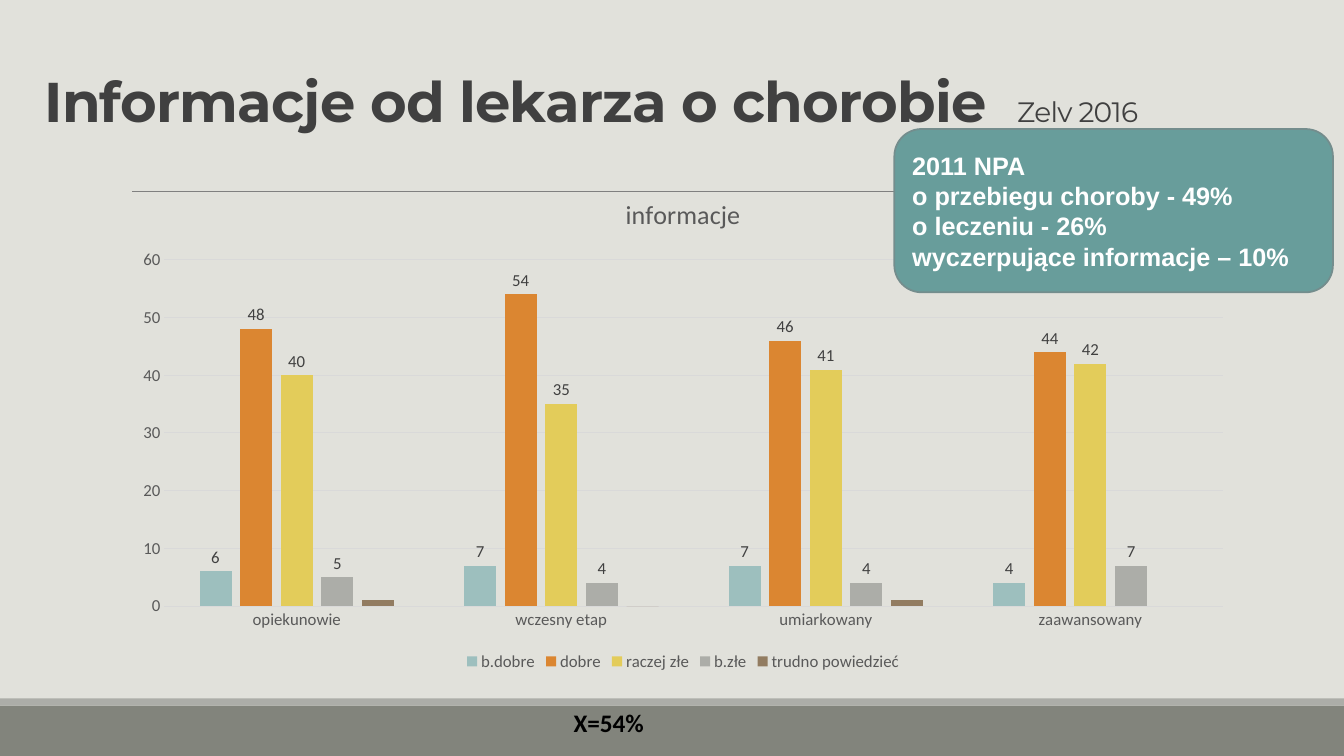
from dataclasses import dataclass
from typing import Optional

import pptx
import pptx.chart.data
import pptx.dml.color
import pptx.enum.chart
import pptx.enum.shapes
import pptx.enum.text
import pptx.oxml
import pptx.oxml.ns
import pptx.util
from pptx.dml.color import RGBColor
from pptx.util import Inches, Pt

BACKGROUND = RGBColor(0xE1, 0xE1, 0xDB)
FOOTER_DARK = RGBColor(0x82, 0x84, 0x7C)
GREY = RGBColor(0xAC, 0xAD, 0xA8)
RULE = RGBColor(0x80, 0x80, 0x80)
GRID = RGBColor(0xD9, 0xD9, 0xD9)
DARK_TEXT = RGBColor(0x40, 0x40, 0x40)
AXIS_TEXT = RGBColor(0x59, 0x59, 0x59)
BLACK = RGBColor(0x00, 0x00, 0x00)
WHITE = RGBColor(0xFF, 0xFF, 0xFF)
TEAL = RGBColor(0x68, 0x9D, 0x9B)
TEAL_EDGE = RGBColor(0x74, 0x8D, 0x8D)
PALE_TEAL = RGBColor(0x9D, 0xBF, 0xBE)
ORANGE = RGBColor(0xDB, 0x86, 0x31)
YELLOW = RGBColor(0xE3, 0xCC, 0x5A)
BROWN = RGBColor(0x92, 0x7C, 0x61)


@dataclass
class Box:
    left: float
    top: float
    width: float
    height: float

    def lengths(self) -> tuple:
        return tuple(Inches(v) for v in (self.left, self.top, self.width, self.height))


@dataclass
class Rating:
    name: str
    values: tuple[Optional[int], ...]
    color: RGBColor
    labelled: bool = True


STAGES = ("opiekunowie", "wczesny etap", "umiarkowany", "zaawansowany")
RATINGS = (
    Rating("b.dobre", (6, 7, 7, 4), PALE_TEAL),
    Rating("dobre", (48, 54, 46, 44), ORANGE),
    Rating("raczej złe", (40, 35, 41, 42), YELLOW),
    Rating("b.złe", (5, 4, 4, 7), GREY),
    Rating("trudno powiedzieć", (1, 0, 1, None), BROWN, labelled=False),
)
FINDINGS = (
    "2011 NPA",
    "o przebiegu choroby - 49%",
    "o leczeniu - 26%",
    "wyczerpujące informacje – 10%",
)


def set_font(font, name: str, size: float, color: RGBColor, bold: bool = False) -> None:
    font.name = name
    font.size = Pt(size)
    font.bold = bold
    font.color.rgb = color


def add_panel(slide, kind, box: Box, fill: RGBColor):
    panel = slide.shapes.add_shape(kind, *box.lengths())
    panel.shadow.inherit = False
    panel.fill.solid()
    panel.fill.fore_color.rgb = fill
    panel.line.fill.background()
    return panel


def add_rule(slide) -> None:
    rule = slide.shapes.add_connector(
        pptx.enum.shapes.MSO_CONNECTOR.STRAIGHT,
        Inches(1.31), Inches(1.9), Inches(12.21), Inches(1.9))
    rule.line.color.rgb = RULE
    rule.line.width = Pt(0.5)
    rule._element.spPr.append(pptx.oxml.parse_xml(
        f"<a:effectLst {pptx.oxml.ns.nsdecls('a')}/>"))


def fill_title(title) -> None:
    title.left, title.top, title.width, title.height = Box(0.34, 0.13, 12.52, 1.25).lengths()
    frame = title.text_frame
    frame.word_wrap = True
    frame.auto_size = pptx.enum.text.MSO_AUTO_SIZE.NONE
    frame.vertical_anchor = pptx.enum.text.MSO_ANCHOR.BOTTOM
    heading = frame.paragraphs[0]
    heading.alignment = pptx.enum.text.PP_ALIGN.LEFT
    heading.line_spacing = 0.85
    for text, size, bold in (("Informacje od lekarza o chorobie  ", 40, True),
                             ("Zelv 2016", 20, False)):
        run = heading.add_run()
        run.text = text
        set_font(run.font, "Montserrat", size, DARK_TEXT, bold)
        run.font._element.set("spc", "-50")


def add_ratings_chart(slide) -> None:
    data = pptx.chart.data.CategoryChartData()
    data.categories = STAGES
    for rating in RATINGS:
        data.add_series(rating.name, rating.values)
    chart = slide.shapes.add_chart(
        pptx.enum.chart.XL_CHART_TYPE.COLUMN_CLUSTERED,
        *Box(1.2, 1.75, 11.15, 4.95).lengths(), data).chart
    set_font(chart.font, "Calibri", 10, BLACK)

    chart.has_title = True
    chart.chart_title.include_in_layout = False
    caption = chart.chart_title.text_frame
    caption.text = "informacje"
    set_font(caption.paragraphs[0].font, "Calibri", 18.6, AXIS_TEXT)

    chart.has_legend = True
    chart.legend.position = pptx.enum.chart.XL_LEGEND_POSITION.BOTTOM
    chart.legend.include_in_layout = False
    set_font(chart.legend.font, "Calibri", 12, AXIS_TEXT)

    # Axes
    stages, percent = chart.category_axis, chart.value_axis
    for axis in (stages, percent):
        axis.major_tick_mark = pptx.enum.chart.XL_TICK_MARK.NONE
        axis.minor_tick_mark = pptx.enum.chart.XL_TICK_MARK.NONE
        set_font(axis.tick_labels.font, "Calibri", 12, AXIS_TEXT)
    percent.minimum_scale, percent.maximum_scale, percent.major_unit = 0, 60, 10
    percent.has_major_gridlines = True
    percent.format.line.fill.background()
    for line in (stages.format.line, percent.major_gridlines.format.line):
        line.color.rgb = GRID
        line.width = Pt(0.75)

    # Columns
    plot = chart.plots[0]
    plot.gap_width, plot.overlap, plot.vary_by_categories = 219, -27, False
    for rating, series in zip(RATINGS, plot.series):
        series.invert_if_negative = False
        series.format.fill.solid()
        series.format.fill.fore_color.rgb = rating.color
        if rating.labelled:
            labels = series.data_labels
            labels.show_value = True
            labels.position = pptx.enum.chart.XL_LABEL_POSITION.OUTSIDE_END
            set_font(labels.font, "Calibri", 12, DARK_TEXT)


def add_mean(slide) -> None:
    mean = slide.shapes.add_textbox(*Box(5.59, 6.97, 1.18, 0.4).lengths()).text_frame
    mean.word_wrap = True
    mean.text = "Χ=54%"
    set_font(mean.paragraphs[0].font, "Calibri", 18, BLACK, bold=True)


def add_findings(slide) -> None:
    callout = add_panel(slide, pptx.enum.shapes.MSO_SHAPE.ROUNDED_RECTANGLE,
                        Box(8.87, 1.28, 4.35, 1.62), TEAL)
    callout.line.color.rgb = TEAL_EDGE
    callout.line.width = Pt(1.25)
    frame = callout.text_frame
    frame.word_wrap = True
    frame.vertical_anchor = pptx.enum.text.MSO_ANCHOR.MIDDLE
    frame.text = "\n".join(FINDINGS)
    for paragraph in frame.paragraphs:
        paragraph.alignment = pptx.enum.text.PP_ALIGN.LEFT
        set_font(paragraph.font, "Arial", 18, WHITE, bold=True)


def main() -> None:
    deck = pptx.Presentation()
    deck.slide_width, deck.slide_height = Inches(13.33), Inches(7.5)
    slide = deck.slides.add_slide(deck.slide_layouts[5])
    slide.background.fill.solid()
    slide.background.fill.fore_color.rgb = BACKGROUND

    # Footer bands and rule
    rectangle = pptx.enum.shapes.MSO_SHAPE.RECTANGLE
    add_panel(slide, rectangle, Box(0, 7, 13.33, 0.5), FOOTER_DARK)
    add_panel(slide, rectangle, Box(0, 6.93, 13.33, 0.07), GREY)
    add_rule(slide)

    # Content
    fill_title(slide.shapes.title)
    add_ratings_chart(slide)
    add_mean(slide)
    add_findings(slide)
    deck.save("out.pptx")


if __name__ == "__main__":
    main()
